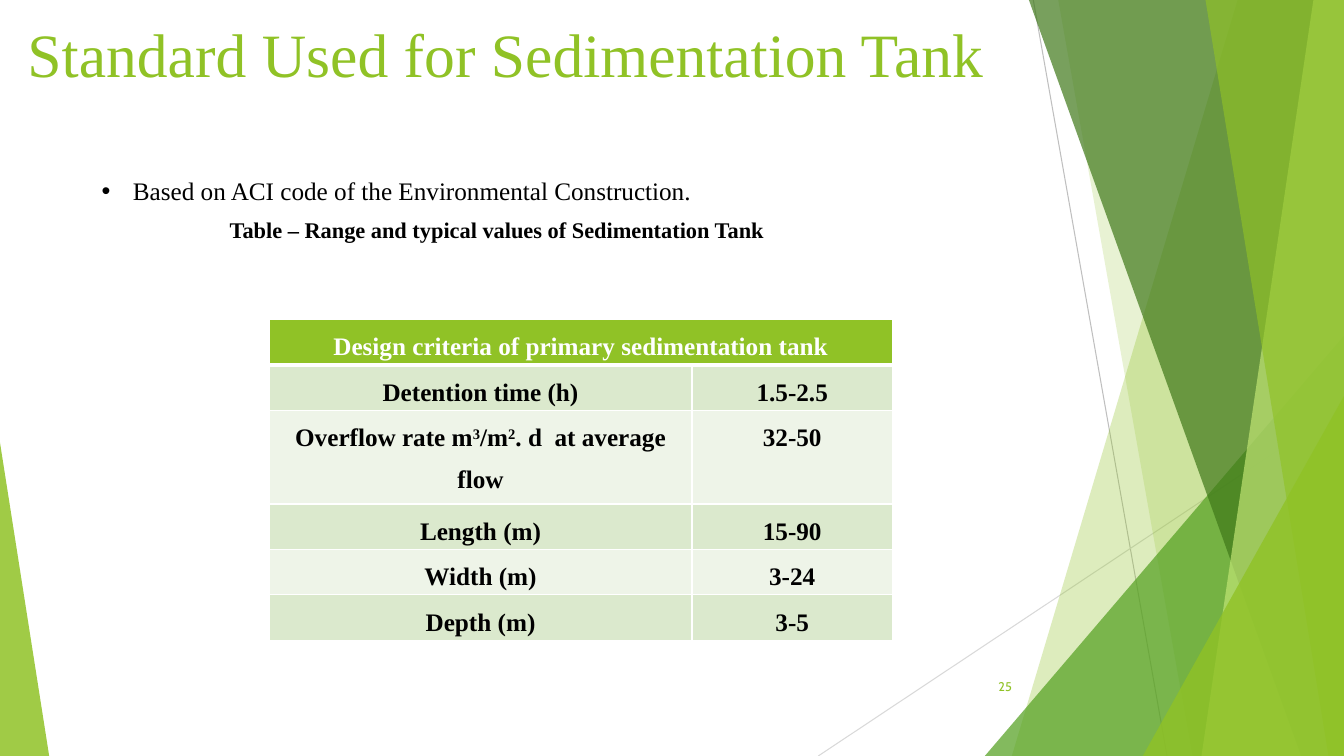
import pptx
import pptx.dml.color
import pptx.enum.shapes
import pptx.enum.text
import pptx.oxml
import pptx.oxml.ns
import pptx.util

Cm = pptx.util.Cm
Pt = pptx.util.Pt
RGBColor = pptx.dml.color.RGBColor
ALIGN = pptx.enum.text.PP_ALIGN
ANCHOR = pptx.enum.text.MSO_ANCHOR
qn = pptx.oxml.ns.qn

LIME = RGBColor(0x90, 0xC2, 0x26)
GREEN = RGBColor(0x54, 0xA0, 0x21)
DARK_GREEN = RGBColor(0x3F, 0x78, 0x19)
PALE_LIME = RGBColor(0xC0, 0xE4, 0x74)
BAND_DARK = RGBColor(0xDB, 0xE9, 0xCD)
BAND_LIGHT = RGBColor(0xEE, 0xF4, 0xE8)
GREY = RGBColor(0xBF, 0xBF, 0xBF)
LIGHT_GREY = RGBColor(0xD9, 0xD9, 0xD9)
WHITE = RGBColor(0xFF, 0xFF, 0xFF)
BLACK = RGBColor(0, 0, 0)

WIDTH, HEIGHT = 33.87, 19.05
SERIF = "Times New Roman"
NS = 'xmlns:a="http://schemas.openxmlformats.org/drawingml/2006/main"'

HEADER = "Design criteria of primary sedimentation tank"
# Odd pieces of a label split at "^" are superscript.
CRITERIA = [
    ("Detention time (h)", "1.5-2.5"),
    ("Overflow rate m^3^/m^2^. d  at average flow", "32-50"),
    ("Length (m)", "15-90"),
    ("Width (m)", "3-24"),
    ("Depth (m)", "3-5"),
]


class SlideBuilder:
    """Draws styled elements on one slide; lengths are in centimetres."""

    def __init__(self, slide):
        self.slide = slide
        self.shapes = slide.shapes

    def line(self, x1, y1, x2, y2, color):
        ln = self.shapes.add_connector(
            pptx.enum.shapes.MSO_CONNECTOR.STRAIGHT, Cm(x1), Cm(y1), Cm(x2), Cm(y2))
        ln.line.color.rgb = color
        ln.line.width = Pt(0.75)
        ln._element.spPr.append(pptx.oxml.parse_xml(f"<a:effectLst {NS}/>"))

    def paint(self, sp, color, opacity):
        sp.shadow.inherit = False
        sp.line.fill.background()
        sp.fill.solid()
        sp.fill.fore_color.rgb = color
        clr = sp._element.spPr.find(qn("a:solidFill"))[0]
        clr.append(pptx.oxml.parse_xml(f'<a:alpha {NS} val="{opacity * 1000}"/>'))

    def facet(self, top_x, bottom_x, color, opacity):
        """Full-height panel from a slanted left side to the right slide edge."""
        fb = self.shapes.build_freeform(Cm(top_x), 0)
        fb.add_line_segments([(Cm(WIDTH), 0), (Cm(WIDTH), Cm(HEIGHT)),
                              (Cm(bottom_x), Cm(HEIGHT))], close=True)
        self.paint(fb.convert_to_shape(), color, opacity)

    def triangle(self, left, top, width, apex, color, opacity):
        """Triangle standing on the bottom slide edge."""
        sp = self.shapes.add_shape(
            pptx.enum.shapes.MSO_SHAPE.ISOSCELES_TRIANGLE,
            Cm(left), Cm(top), Cm(width), Cm(HEIGHT - top))
        sp.adjustments[0] = apex
        self.paint(sp, color, opacity)

    def style(self, p, size, color, bold=False, font=SERIF):
        for r in p.runs:
            r.font.name = font
            r.font.size = Pt(size)
            r.font.bold = bold
            r.font.color.rgb = color

    def text(self, box, text, size, color, align=ALIGN.LEFT, anchor=ANCHOR.TOP,
             bold=False, font=SERIF, wrap=True, bullet=False):
        tf = self.shapes.add_textbox(*map(Cm, box)).text_frame
        tf.word_wrap = wrap
        tf.vertical_anchor = anchor
        p = tf.paragraphs[0]
        p.text = text
        p.alignment = align
        if bullet:
            pPr = p._p.get_or_add_pPr()
            pPr.set("marL", str(Cm(0.79)))
            pPr.set("indent", str(-Cm(0.79)))
            pPr.append(pptx.oxml.parse_xml(f'<a:buFont {NS} typeface="Arial"/>'))
            pPr.append(pptx.oxml.parse_xml(f'<a:buChar {NS} char="•"/>'))
        self.style(p, size, color, bold, font)

    def cell(self, cell, text, fill, color=BLACK, bottom=1):
        cell.fill.solid()
        cell.fill.fore_color.rgb = fill
        cell.margin_left = cell.margin_right = Cm(0.18)
        cell.margin_top = cell.margin_bottom = 0
        p = cell.text_frame.paragraphs[0]
        p.alignment = ALIGN.CENTER
        p.line_spacing = 1.5
        p.space_after = Pt(8)
        for i, part in enumerate(text.split("^")):
            r = p.add_run()
            r.text = part
            if i % 2:
                r._r.get_or_add_rPr().set("baseline", "30000")
        self.style(p, 18, color, bold=True)
        self.borders(cell, bottom)

    def borders(self, cell, bottom):
        tcPr = cell._tc.get_or_add_tcPr()
        for i, (side, width) in enumerate(zip("LRTB", (1, 1, 1, bottom))):
            tcPr.insert(i, pptx.oxml.parse_xml(
                f'<a:ln{side} {NS} w="{Pt(width)}"><a:solidFill>'
                f'<a:srgbClr val="{WHITE}"/></a:solidFill></a:ln{side}>'))

    def table(self, left, top, col_widths, row_heights, header, rows):
        tbl = self.shapes.add_table(
            len(row_heights), len(col_widths), Cm(left), Cm(top),
            Cm(sum(col_widths)), Cm(sum(row_heights))).table
        tbl.first_row = tbl.horz_banding = False
        for col, width in zip(tbl.columns, col_widths):
            col.width = Cm(width)
        for row, height in zip(tbl.rows, row_heights):
            row.height = Cm(height)
        tbl.cell(0, 0).merge(tbl.cell(0, 1))
        self.cell(tbl.cell(0, 0), header, LIME, WHITE, bottom=3)
        self.borders(tbl.cell(0, 1), bottom=3)
        for i, row in enumerate(rows, 1):
            for j, text in enumerate(row):
                self.cell(tbl.cell(i, j), text, BAND_DARK if i % 2 else BAND_LIGHT)


def main():
    prs = pptx.Presentation()
    prs.slide_width, prs.slide_height = Cm(WIDTH), Cm(HEIGHT)
    s = SlideBuilder(prs.slides.add_slide(prs.slide_layouts[6]))

    s.line(26.04, 0, 29.41, HEIGHT, GREY)
    s.line(WIDTH, 10.24, 20.62, HEIGHT, LIGHT_GREY)
    s.facet(31.19, 25.5, LIME, 30)
    s.facet(26.67, 30.05, LIME, 20)
    s.triangle(24.82, 8.46, 9.05, 1, GREEN, 72)
    s.facet(25.93, 32.79, DARK_GREEN, 70)
    s.facet(33.1, 30.28, PALE_LIME, 70)
    s.facet(30.38, 33.48, LIME, 65)
    s.triangle(28.8, 9.98, 5.07, 1, LIME, 80)
    s.triangle(0, 11.15, 1.24, 0, LIME, 85)

    s.text((-0.94, 0.28, 27.38, 2.11), "Standard Used for Sedimentation Tank",
           44, LIME, ALIGN.CENTER, ANCHOR.BOTTOM)
    s.text((23.85, 16.79, 1.9, 1.02), "25", 9, LIME, ALIGN.RIGHT,
           ANCHOR.MIDDLE, font="Cabin")
    s.text((5.54, 5.31, 14.15, 1.7),
           "Table – Range and typical values of Sedimentation Tank",
           16, BLACK, bold=True, wrap=False)
    s.text((2.31, 4.29, 15.52, 1.02),
           "Based on ACI code of the Environmental Construction.",
           18, BLACK, wrap=False, bullet=True)
    s.table(6.78, 8.05, (10.66, 5.05), (1.12, 1.12, 2.36, 1.12, 1.12, 1.12),
            HEADER, CRITERIA)
    prs.save("out.pptx")


if __name__ == "__main__":
    main()
